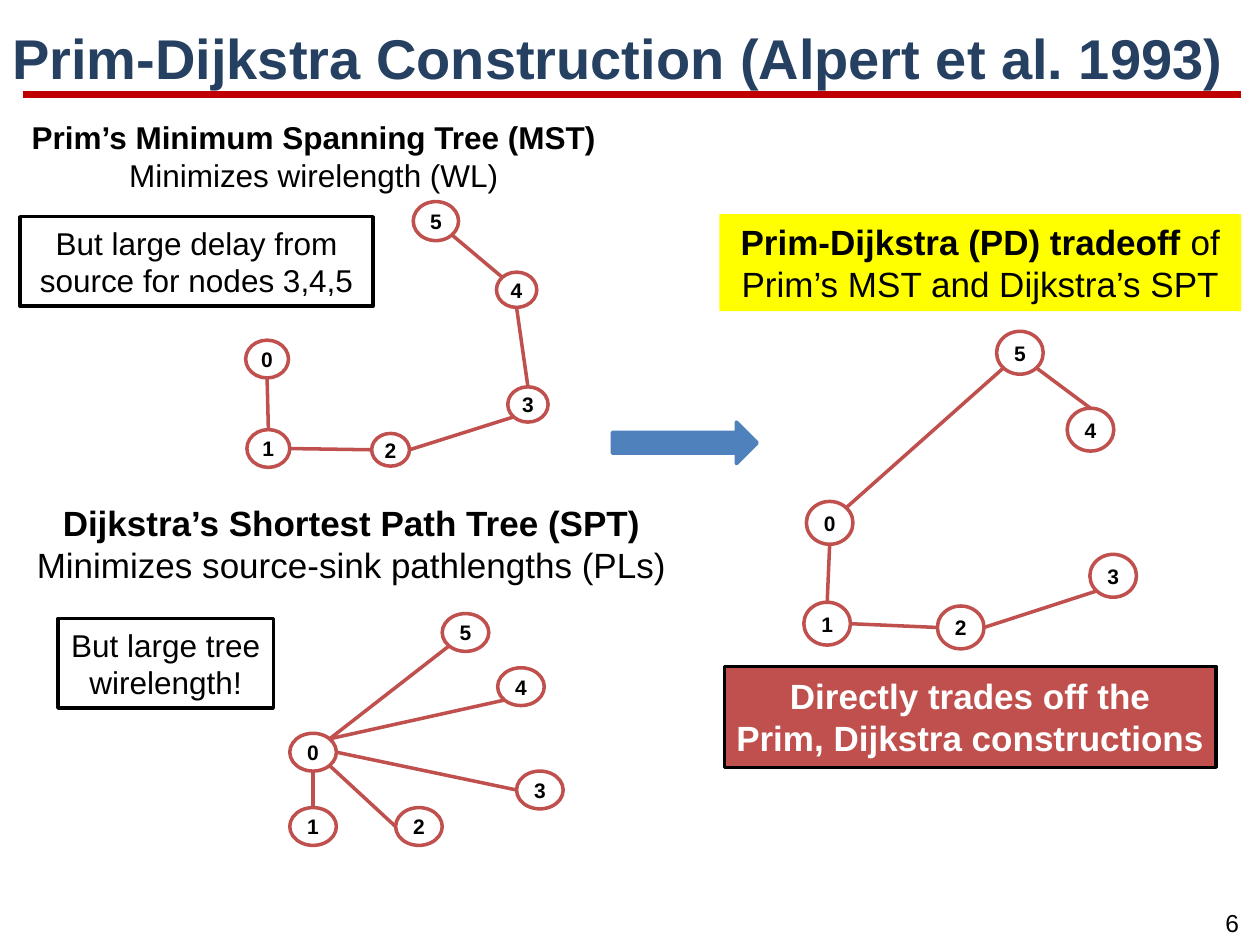
from math import sqrt

from lxml.etree import SubElement
from pptx import Presentation
from pptx.dml.color import RGBColor
from pptx.enum.shapes import MSO_CONNECTOR, MSO_SHAPE
from pptx.enum.text import MSO_ANCHOR, PP_ALIGN
from pptx.oxml.ns import qn
from pptx.util import Inches, Pt

FONT = "Arial"
BLACK = RGBColor(0x00, 0x00, 0x00)
WHITE = RGBColor(0xFF, 0xFF, 0xFF)
NAVY = RGBColor(0x25, 0x40, 0x61)
RULE_RED = RGBColor(0xC0, 0x00, 0x00)
TREE_RED = RGBColor(0xC0, 0x50, 0x4D)
BLUE = RGBColor(0x4F, 0x81, 0xBD)
YELLOW = RGBColor(0xFF, 0xFF, 0x00)

TITLE = "Prim-Dijkstra Construction (Alpert et al. 1993)"

# Each paragraph is a list of (text, bold) spans.
HEADINGS = [
    ((0.13, 0.89, 4.72, 0.71), 18,
     [[("Prim’s Minimum Spanning Tree (MST)", True)],
      [("Minimizes wirelength (WL)", False)]]),
    ((0.17, 3.93, 5.24, 0.77), 20,
     [[("Dijkstra’s Shortest Path Tree (SPT)", True)],
      [("Minimizes source-sink pathlengths (PLs)", False)]]),
]

# Position, fill, outline, text colour, size, wrap, paragraphs
CALLOUTS = [
    ((5.71, 1.7, 4.14, 0.77), YELLOW, None, BLACK, 20, True,
     [[("Prim-Dijkstra (PD) tradeoff ", True),
       ("of Prim’s MST and Dijkstra’s SPT", False)]]),
    ((5.75, 5.29, 3.9, 0.8), TREE_RED, BLACK, WHITE, 20, False,
     [[("Directly trades off the", True)],
      [("Prim, Dijkstra constructions", True)]]),
    ((0.16, 1.72, 2.8, 0.71), WHITE, BLACK, BLACK, 18, True,
     [[("But large delay from source for nodes 3,4,5", False)]]),
    ((0.46, 4.91, 1.71, 0.71), WHITE, BLACK, BLACK, 18, True,
     [[("But large tree", False)], [("wirelength!", False)]]),
]

# Nodes: label -> left, top, width, height.
# Edges: node, side it leaves from, node, side it arrives at.
MST = (
    {"0": (1.95, 2.7, 0.34, 0.3), "1": (1.96, 3.41, 0.34, 0.3),
     "2": (2.95, 3.44, 0.3, 0.26), "3": (4.03, 3.07, 0.32, 0.28),
     "4": (3.94, 2.16, 0.32, 0.28), "5": (3.28, 1.6, 0.36, 0.31)},
    [("0", "S", "1", "N"), ("1", "E", "2", "W"), ("2", "E", "3", "SW"),
     ("3", "N", "4", "S"), ("4", "NW", "5", "SE")],
)
SPT_SIZE = (0.37, 0.3)
SPT = (
    {"0": (2.3, 5.82, *SPT_SIZE), "1": (2.3, 6.41, *SPT_SIZE),
     "2": (3.14, 6.41, *SPT_SIZE), "3": (4.1, 6.12, *SPT_SIZE),
     "4": (3.95, 5.3, *SPT_SIZE), "5": (3.51, 4.87, *SPT_SIZE)},
    [("0", "S", "1", "N"), ("0", "SE", "2", "W"), ("0", "E", "3", "W"),
     ("0", "NE", "4", "SW"), ("0", "NE", "5", "SW")],
)
PD_SIZE = (0.37, 0.34)
PD = (
    {"0": (6.4, 3.98, *PD_SIZE), "1": (6.38, 4.78, *PD_SIZE),
     "2": (7.44, 4.81, *PD_SIZE), "3": (8.65, 4.4, *PD_SIZE),
     "4": (8.47, 3.24, *PD_SIZE), "5": (7.91, 2.63, *PD_SIZE)},
    [("0", "S", "1", "N"), ("1", "E", "2", "W"), ("2", "E", "3", "SW"),
     ("0", "NE", "5", "SW"), ("5", "SE", "4", "N")],
)


def rim_point(node, side):
    """Point on a node's outline in a compass direction."""
    left, top, width, height = node
    dx = ("E" in side) - ("W" in side)
    dy = ("S" in side) - ("N" in side)
    length = sqrt(dx * dx + dy * dy)
    return (left + width / 2 * (1 + dx / length),
            top + height / 2 * (1 + dy / length))


def write(shape, paragraphs, size, color=BLACK, align=PP_ALIGN.CENTER,
          wrap=False, anchor=MSO_ANCHOR.MIDDLE):
    frame = shape.text_frame
    frame.word_wrap = wrap
    frame.vertical_anchor = anchor
    for index, spans in enumerate(paragraphs):
        para = frame.add_paragraph() if index else frame.paragraphs[0]
        para.alignment = align
        para.font.name = FONT
        para.font.size = Pt(size)
        para.font.color.rgb = color
        for text, bold in spans:
            span = para.add_run()
            span.text = text
            span.font.bold = bold


def add_text(shapes, place, paragraphs, size, **style):
    box = shapes.add_textbox(*map(Inches, place))
    write(box, paragraphs, size, **style)
    return box


def add_filled(shapes, kind, place, fill, outline):
    shape = shapes.add_shape(kind, *map(Inches, place))
    shape.shadow.inherit = False
    shape.fill.solid()
    shape.fill.fore_color.rgb = fill
    if outline is None:
        shape.line.fill.background()
    else:
        shape.line.color.rgb = outline
        shape.line.width = Pt(2)
    return shape


def add_line(shapes, start, end, color, width):
    line = shapes.add_connector(MSO_CONNECTOR.STRAIGHT,
                                *map(Inches, (*start, *end)))
    line.line.color.rgb = color
    line.line.width = Pt(width)
    SubElement(line._element.spPr, qn("a:effectLst"))


def add_tree(page, nodes, edges):
    shapes = page.shapes.add_group_shape().shapes
    for label, place in nodes.items():
        node = add_filled(shapes, MSO_SHAPE.OVAL, place, WHITE, TREE_RED)
        write(node, [[(label, True)]], 12)
    for first, first_side, second, second_side in edges:
        add_line(shapes, rim_point(nodes[first], first_side),
                 rim_point(nodes[second], second_side), TREE_RED, 2)


def main():
    deck = Presentation()
    deck.slide_width, deck.slide_height = Inches(10), Inches(7.5)
    page = deck.slides.add_slide(deck.slide_layouts[6])
    shapes = page.shapes

    add_line(shapes, (0.18, 0.75), (9.85, 0.75), RULE_RED, 4.5)
    add_text(shapes, (9.56, 7.16, 0.44, 0.34), [[("6", False)]], 14,
             anchor=MSO_ANCHOR.TOP)
    title = add_text(shapes, (0, 0.16, 10, 0.65), [[(TITLE, True)]], 32,
                     color=NAVY, align=PP_ALIGN.LEFT, wrap=True)
    title.text_frame.paragraphs[0].line_spacing = 0.9

    for place, size, paragraphs in HEADINGS:
        add_text(shapes, place, paragraphs, size, anchor=MSO_ANCHOR.TOP)
    for place, fill, outline, color, size, wrap, paragraphs in CALLOUTS:
        callout = add_filled(shapes, MSO_SHAPE.RECTANGLE, place, fill, outline)
        write(callout, paragraphs, size, color=color, wrap=wrap)
    add_filled(shapes, MSO_SHAPE.RIGHT_ARROW, (4.86, 3.35, 1.15, 0.33),
               BLUE, BLUE)
    for nodes, edges in (MST, SPT, PD):
        add_tree(page, nodes, edges)

    deck.save("out.pptx")


if __name__ == "__main__":
    main()
